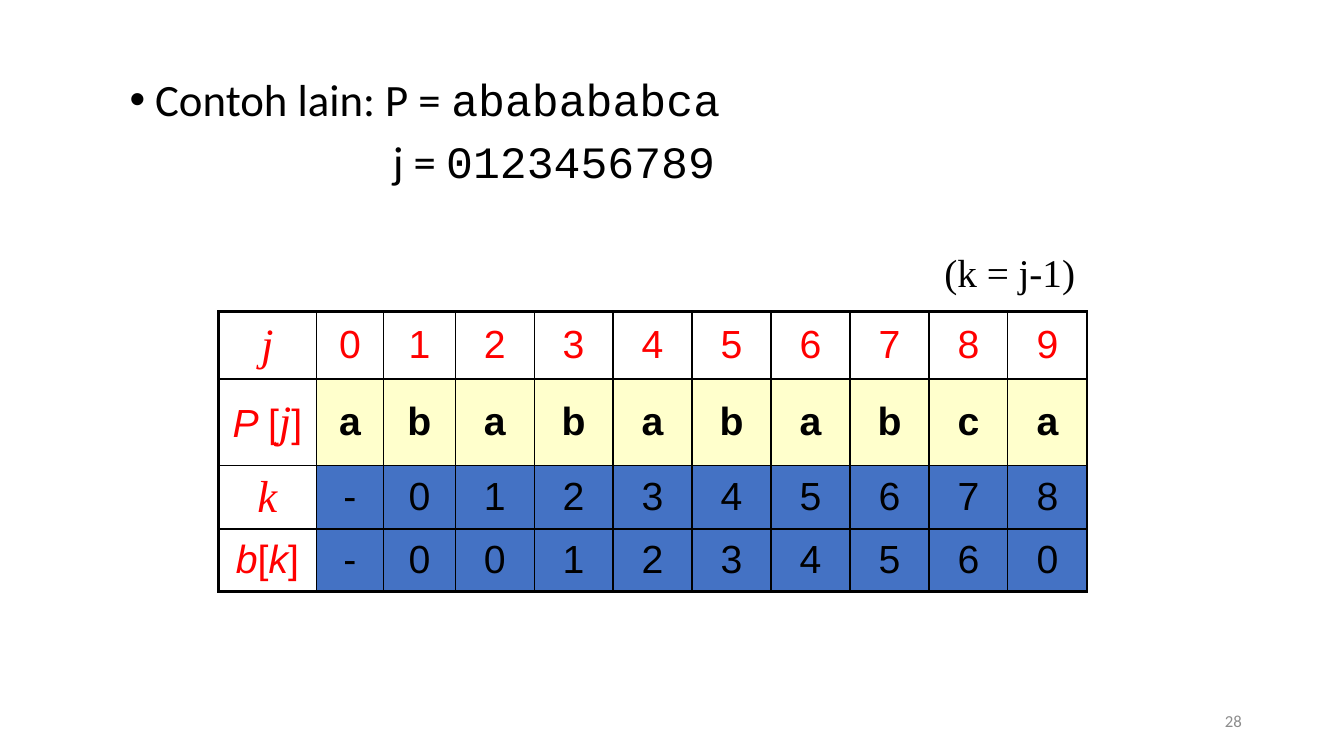
"""Build the slide with the border function table for a second example pattern."""
from lxml import etree
from pptx import Presentation
from pptx.dml.color import RGBColor
from pptx.enum.text import MSO_ANCHOR, MSO_AUTO_SIZE, PP_ALIGN
from pptx.oxml.ns import qn
from pptx.util import Cm, Pt

LEFT, CENTER, RIGHT = PP_ALIGN.LEFT, PP_ALIGN.CENTER, PP_ALIGN.RIGHT
TOP, MIDDLE = MSO_ANCHOR.TOP, MSO_ANCHOR.MIDDLE
FIT_SHAPE = MSO_AUTO_SIZE.SHAPE_TO_FIT_TEXT

COLORS = {"black": "000000", "red": "FF0000", "gray": "8C8C8C",
          "cream": "FFFFCC", "blue": "4472C4"}
SANS, BODY, MONO, SERIF = "Arial", "Calibri", "Courier New", "Times New Roman"

PATTERN_LINES = [
    [("Contoh lain: P = ", {"font": BODY}), ("ababababca", {"font": MONO})],
    [("j = ", {"font": BODY}), ("0123456789", {"font": MONO})],
]
BULLET_INDENT, J_INDENT = Cm(0.64), Cm(6.63)

VARIABLE = {"font": SERIF, "size": 32, "italic": True}
ITALIC = {"italic": True}
ROWS = [
    {"label": [("j", VARIABLE)], "values": "0123456789",
     "fill": None, "format": {"color": "red"}},
    {"label": [("P ", ITALIC), ("[", {}), ("j", VARIABLE), ("]", {})],
     "values": "ababababca", "fill": "cream", "format": {"bold": True}},
    {"label": [("k", VARIABLE)], "values": "-012345678", "fill": "blue", "format": {}},
    {"label": [("b", ITALIC), ("[", {}), ("k", ITALIC), ("]", {})],
     "values": "-001234560", "fill": "blue", "format": {}},
]
ROWS[1]["values"] = "abababab" + "ca"
COL_WIDTHS = [2.46, 1.7, 1.8] + [1.99] * 8
ROW_HEIGHTS = [1.7, 2.17, 1.58, 1.58]
THIN, THICK = 1, 2.25


def add_run(p, text, font=SANS, size=28, color="black", bold=False, italic=False):
    r = p.add_run()
    r.text = text
    r.font.name, r.font.size = font, Pt(size)
    r.font.bold, r.font.italic = bold, italic
    r.font.color.rgb = RGBColor.from_string(COLORS[color])


def add_box(s, left, top, width, height, anchor=MIDDLE, wrap=True):
    tf = s.shapes.add_textbox(Cm(left), Cm(top), Cm(width), Cm(height)).text_frame
    tf.word_wrap = wrap
    tf.vertical_anchor = anchor
    return tf


def add_border(cell, side, width):
    ln = etree.SubElement(cell._tc.get_or_add_tcPr(), qn(f"a:ln{side}"), w=str(Pt(width)))
    fill = etree.SubElement(ln, qn("a:solidFill"))
    etree.SubElement(fill, qn("a:srgbClr"), val=COLORS["black"])


def add_pattern(s):
    tf = add_box(s, 3.02, 1.83, 26.64, 15.14, anchor=TOP)
    for i, line in enumerate(PATTERN_LINES):
        p = tf.add_paragraph() if i else tf.paragraphs[0]
        pPr = p._p.get_or_add_pPr()
        if i:
            p.space_before = Pt(10)
            pPr.set("marL", str(J_INDENT))
        else:
            pPr.set("marL", str(BULLET_INDENT))
            pPr.set("indent", str(-BULLET_INDENT))
            etree.SubElement(pPr, qn("a:buFont"), typeface=SANS)
            etree.SubElement(pPr, qn("a:buChar"), char="•")
        p.line_spacing = 0.9
        for text, fmt in line:
            add_run(p, text, size=32, **fmt)


def add_border_table(s):
    n_rows, n_cols = len(ROWS), len(COL_WIDTHS)
    table = s.shapes.add_table(n_rows, n_cols, Cm(5.51), Cm(7.85),
                               Cm(sum(COL_WIDTHS)), Cm(sum(ROW_HEIGHTS))).table
    table.first_row = table.horz_banding = False
    for col, width in zip(table.columns, COL_WIDTHS):
        col.width = Cm(width)
    for i, row in enumerate(ROWS):
        table.rows[i].height = Cm(ROW_HEIGHTS[i])
        label = [(text, {"color": "red", **fmt}) for text, fmt in row["label"]]
        values = [[(value, row["format"])] for value in row["values"]]
        for j, runs in enumerate([label] + values):
            cell = table.cell(i, j)
            cell.vertical_anchor = MIDDLE
            p = cell.text_frame.paragraphs[0]
            p.alignment = CENTER
            for text, fmt in runs:
                add_run(p, text, **fmt)
            heavy = {"L": j == 0, "R": j == n_cols - 1,
                     "T": i in (0, n_rows - 1), "B": i >= n_rows - 2}
            for side, is_heavy in heavy.items():
                add_border(cell, side, THICK if is_heavy else THIN)
            if j and row["fill"]:
                cell.fill.solid()
                cell.fill.fore_color.rgb = RGBColor.from_string(COLORS[row["fill"]])
            else:
                cell.fill.background()


def main():
    prs = Presentation()
    prs.slide_width, prs.slide_height = Cm(33.87), Cm(19.05)
    s = prs.slides.add_slide(prs.slide_layouts[6])
    add_pattern(s)
    tf = add_box(s, 23.55, 6.12, 3.89, 1.45, wrap=False)
    tf.auto_size = FIT_SHAPE
    add_run(tf.paragraphs[0], "(k = j-1)", font=SERIF)
    add_border_table(s)
    p = add_box(s, 23.93, 17.65, 7.62, 1.02).paragraphs[0]
    p.alignment = RIGHT
    add_run(p, "28", font=BODY, size=12, color="gray")
    prs.save("out.pptx")


if __name__ == "__main__":
    main()
